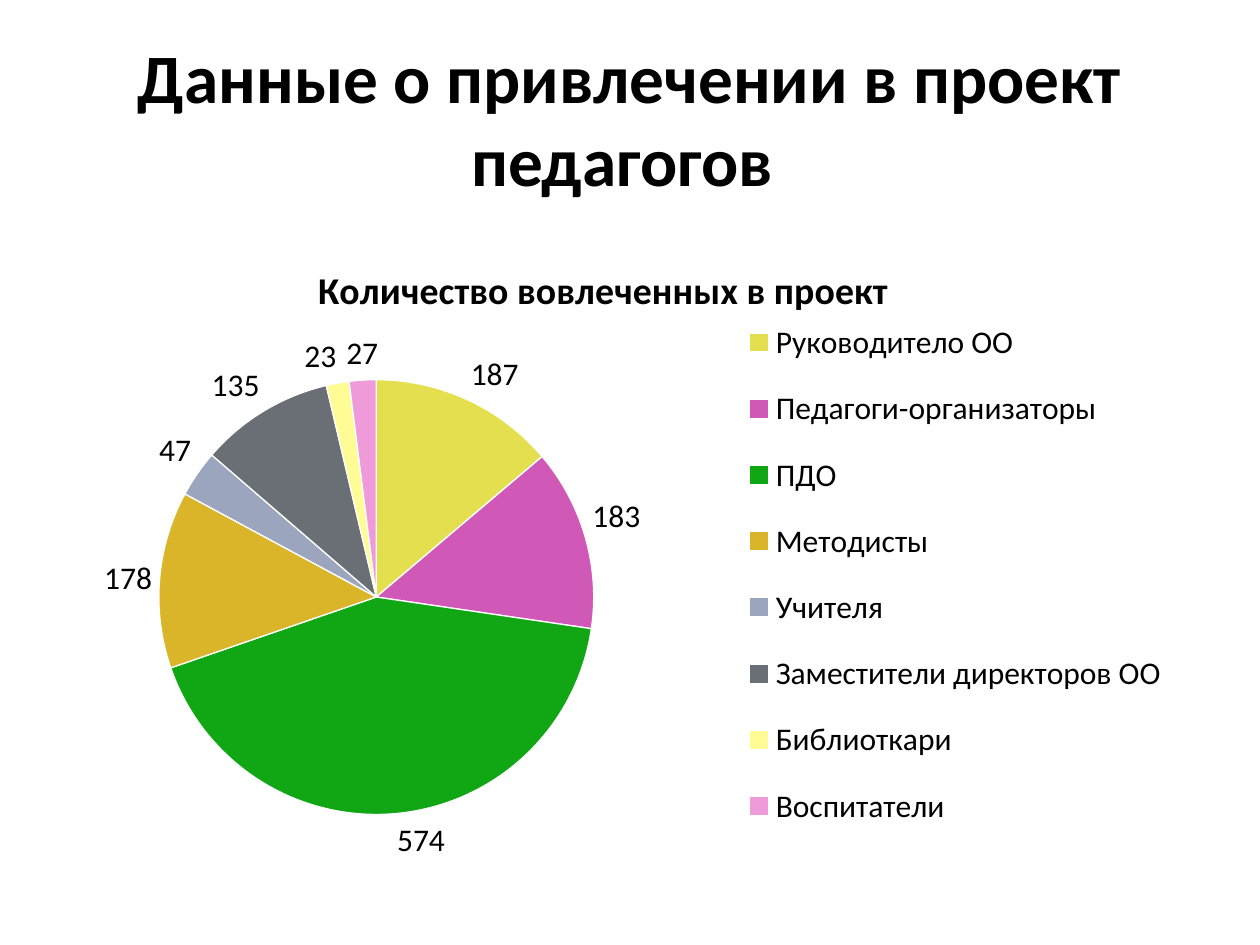
import pptx
import pptx.chart.data
import pptx.dml.color
import pptx.enum.chart
import pptx.enum.text
import pptx.oxml
import pptx.oxml.ns
import pptx.util

RGBColor = pptx.dml.color.RGBColor
BLACK = RGBColor(0x00, 0x00, 0x00)
WHITE = RGBColor(0xFF, 0xFF, 0xFF)
YELLOW = RGBColor(0xE4, 0xDF, 0x4E)
MAGENTA = RGBColor(0xD0, 0x58, 0xB6)
GREEN = RGBColor(0x10, 0xA6, 0x14)
GOLD = RGBColor(0xDA, 0xB5, 0x2A)
BLUE_GREY = RGBColor(0x9B, 0xA6, 0xBE)
GREY = RGBColor(0x6A, 0x6F, 0x75)
PALE_YELLOW = RGBColor(0xFF, 0xFC, 0x96)
PINK = RGBColor(0xF0, 0x9B, 0xD9)

EMU_PER_PX = 914400 // 126
CHART_TITLE = "Количество вовлеченных в проект"
STAFF = [
    ("Руководитело ОО", 187, YELLOW),
    ("Педагоги-организаторы", 183, MAGENTA),
    ("ПДО", 574, GREEN),
    ("Методисты", 178, GOLD),
    ("Учителя ", 47, BLUE_GREY),
    ("Заместители директоров ОО", 135, GREY),
    ("Библиоткари", 23, PALE_YELLOW),
    ("Воспитатели", 27, PINK),
]


class Deck:
    font_name = "Calibri"

    def __init__(self, width, height):
        self.presentation = pptx.Presentation()
        self.presentation.slide_width = self.px(width)
        self.presentation.slide_height = self.px(height)
        self.slide = self.presentation.slides.add_slide(self.presentation.slide_layouts[6])

    def px(self, length):
        return pptx.util.Emu(length * EMU_PER_PX)

    def style(self, font, size, bold=False):
        font.name = self.font_name
        font.size = pptx.util.Pt(size)
        font.bold = bold
        font.color.rgb = BLACK

    def heading(self, text, size, *box):
        frame = self.slide.shapes.add_textbox(*map(self.px, box)).text_frame
        frame.word_wrap = True
        frame.vertical_anchor = pptx.enum.text.MSO_ANCHOR.MIDDLE
        paragraph = frame.paragraphs[0]
        paragraph.alignment = pptx.enum.text.PP_ALIGN.CENTER
        run = paragraph.add_run()
        run.text = text
        self.style(run.font, size, True)

    def place(self, part, target=None, **fractions):
        for old in part.findall(pptx.oxml.ns.qn("c:layout")):
            part.remove(old)
        modes = "".join(f'<c:{axis}Mode val="edge"/>' for axis in "xy")
        sizes = "".join(f'<c:{key} val="{value}"/>' for key, value in fractions.items())
        inner = f'<c:layoutTarget val="{target}"/>' if target else ""
        layout = pptx.oxml.parse_xml(
            f'<c:layout {pptx.oxml.ns.nsdecls("c")}><c:manualLayout>'
            f"{inner}{modes}{sizes}</c:manualLayout></c:layout>"
        )
        before = {"title": "c:tx", "legend": "c:legendPos"}.get(part.tag.split("}")[1])
        position = part.index(part.find(pptx.oxml.ns.qn(before))) + 1 if before else 0
        part.insert(position, layout)

    def pie(self, title, rows, *box):
        data = pptx.chart.data.CategoryChartData()
        data.categories = [name for name, _, _ in rows]
        data.add_series(title, [count for _, count, _ in rows])
        chart = self.slide.shapes.add_chart(
            pptx.enum.chart.XL_CHART_TYPE.PIE, *map(self.px, box), data
        ).chart
        self.style(chart.font, 18)

        chart.has_title = True
        caption = chart.chart_title.text_frame.paragraphs[0].add_run()
        caption.text = title
        self.style(caption.font, 21.6, True)
        chart.chart_title.include_in_layout = False

        chart.has_legend = True
        chart.legend.position = pptx.enum.chart.XL_LEGEND_POSITION.RIGHT
        chart.legend.include_in_layout = False
        self.style(chart.legend.font, 18)

        plot = chart.plots[0]
        plot.vary_by_categories = True
        for index, (_, _, colour) in enumerate(rows):
            slice_format = plot.series[0].points[index].format
            slice_format.fill.solid()
            slice_format.fill.fore_color.rgb = colour
            slice_format.line.color.rgb = WHITE
            slice_format.line.width = pptx.util.Pt(0.75)
        plot.has_data_labels = True
        labels = plot.data_labels
        labels.show_value = True
        labels.show_percentage = False
        labels.position = pptx.enum.chart.XL_LABEL_POSITION.OUTSIDE_END
        self.style(labels.font, 18)

        area = plot.series[0].format.line and chart.element.find(".//" + pptx.oxml.ns.qn("c:plotArea"))
        self.place(area, "inner", x=0.13, y=0.24, w=0.37, h=0.67)
        legend = chart.element.find(".//" + pptx.oxml.ns.qn("c:legend"))
        self.place(legend, x=0.62, y=0.11, w=0.37, h=0.86)
        heading = chart.element.find(".//" + pptx.oxml.ns.qn("c:title"))
        self.place(heading, x=0.26, y=0.05)


def main():
    deck = Deck(1260, 945)
    deck.heading("Данные о привлечении в проект педагогов ", 39.6, 63, 38, 1134, 158)
    deck.pie(CHART_TITLE, STAFF, 4, 224, 1182, 649)
    deck.presentation.save("out.pptx")


if __name__ == "__main__":
    main()
